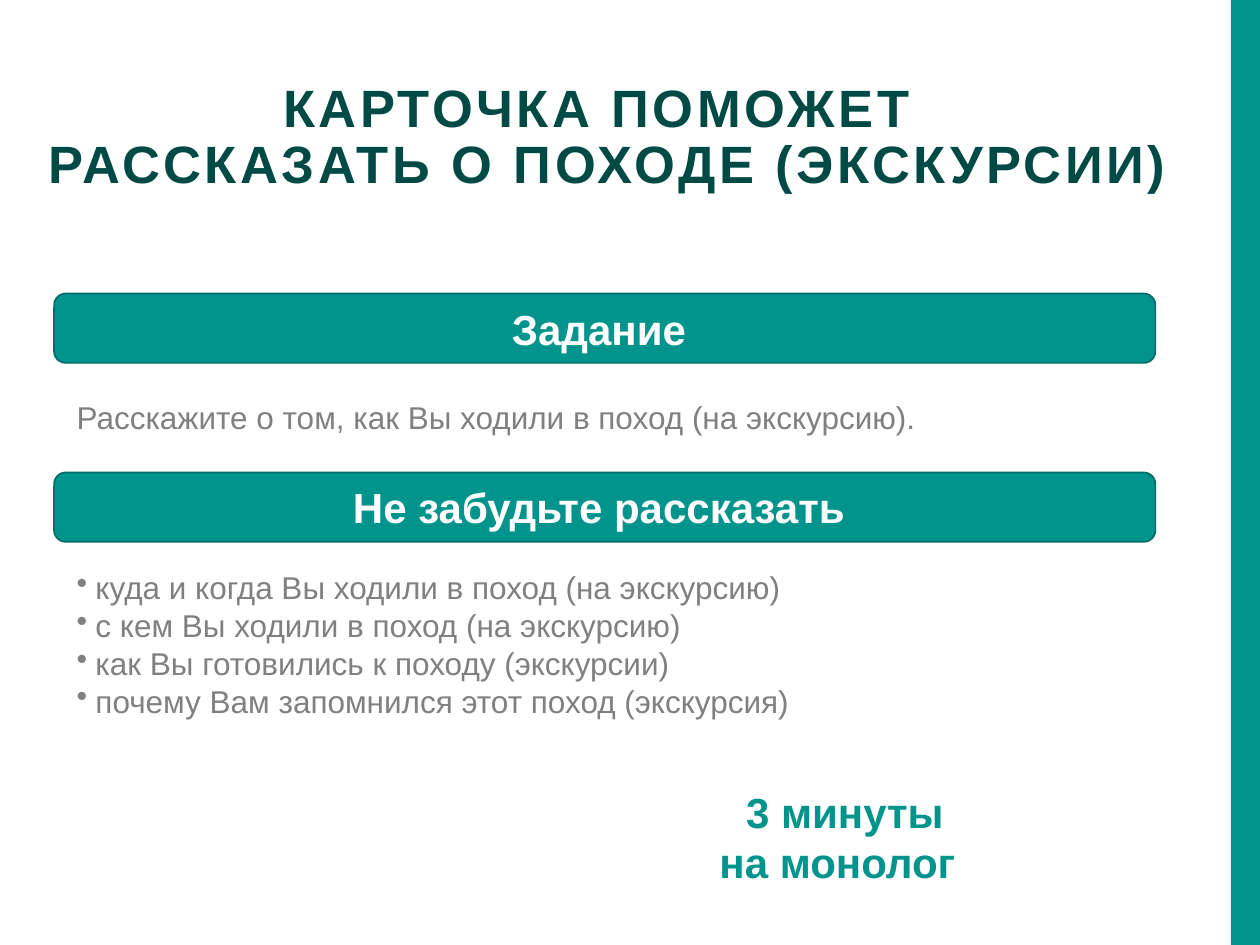
from dataclasses import dataclass

from lxml import etree
from pptx import Presentation
from pptx.dml.color import RGBColor
from pptx.enum import shapes, text
from pptx.oxml import ns
from pptx.util import Emu, Inches, Pt

COLS, ROWS = 100, 75
CELL = Inches(0.1)
TEAL, EDGE, DARK, GREY, WHITE = "00948C", "006D68", "004A46", "808080", "FFFFFF"
LEFT, MID, RIGHT = text.PP_ALIGN.LEFT, text.PP_ALIGN.CENTER, text.PP_ALIGN.RIGHT


@dataclass(frozen=True)
class Area:
    """Place on the grid, in columns and rows."""
    col: float
    row: float
    wide: float
    high: float

    def box(self) -> list[Emu]:
        """Give left, top, width and height as lengths."""
        return [Emu(round(n * CELL)) for n in (self.col, self.row, self.wide, self.high)]


@dataclass(frozen=True)
class Style:
    """Look of a block of text."""
    size: int
    ink: str
    bold: bool = False
    align: text.PP_ALIGN = LEFT
    track: int = 0
    lead: float = 1.0
    dots: bool = False


@dataclass(frozen=True)
class Block:
    """Lines of text, one paragraph each, in an area."""
    area: Area
    style: Style
    lines: tuple[str, ...]


TITLE = Style(30, DARK, True, MID, track=2, lead=0.9)
HEAD = Style(24, WHITE, True, MID)
TIME = Style(24, TEAL, True, RIGHT)
BODY = Style(18, GREY)
LIST = Style(18, GREY, dots=True)

EDGE_BAR = Area(97.7, 0, 2.3, ROWS)
HEADS = [
    Block(Area(4.3, row, 87.4, 5.5), HEAD, (label,))
    for row, label in ((23.3, "Задание "), (37.5, "Не забудьте рассказать "))
]
TEXTS = [
    Block(Area(0, 6, 95, 11.8), TITLE,
          ("КАРТОЧКА ПОМОЖЕТ\v РАССКАЗАТЬ О ПОХОДЕ (ЭКСКУРСИИ)",)),
    Block(Area(50.8, 61.9, 26, 9.1), TIME, ("3 минуты ", "на монолог")),
    Block(Area(5.1, 31.1, 79.4, 4), BODY,
          ("Расскажите о том, как Вы ходили в поход (на экскурсию).",)),
    Block(Area(5.1, 44.6, 76.4, 13.1), LIST, (
        "куда и когда Вы ходили в поход (на экскурсию)",
        "с кем Вы ходили в поход (на экскурсию)",
        "как Вы готовились к походу (экскурсии)",
        "почему Вам запомнился этот поход (экскурсия)",
    )),
]


def hue(code: str) -> RGBColor:
    """Turn a hex string into a colour."""
    return RGBColor.from_string(code)


def dot(para) -> None:
    """Give a paragraph a hanging bullet."""
    props = para._p.get_or_add_pPr()
    hang = Inches(0.15)
    props.set("marL", str(hang))
    props.set("indent", str(-hang))
    etree.SubElement(props, ns.qn("a:buChar")).set("char", "•")


def write(frame, lines: tuple[str, ...], style: Style) -> None:
    """Fill a text frame, run by run."""
    frame.word_wrap = True
    for i, line in enumerate(lines):
        para = frame.add_paragraph() if i else frame.paragraphs[0]
        para.alignment = style.align
        para.line_spacing = style.lead
        if style.dots:
            dot(para)
        for j, part in enumerate(line.split("\v")):
            if j:
                para.add_line_break()
            run = para.add_run()
            run.text = part
            font = run.font
            font.name, font.size, font.bold = "Arial", Pt(style.size), style.bold
            font.color.rgb = hue(style.ink)
            if style.track:
                run._r.get_or_add_rPr().set("spc", str(style.track * 100))


def panel(slide, kind: shapes.MSO_SHAPE, area: Area, edge: str = ""):
    """Draw a teal shape, with an outline if one is named."""
    shape = slide.shapes.add_shape(kind, *area.box())
    shape.shadow.inherit = False
    shape.fill.solid()
    shape.fill.fore_color.rgb = hue(TEAL)
    if edge:
        shape.line.color.rgb = hue(edge)
        shape.line.width = Pt(1)
    else:
        shape.line.fill.background()
    return shape


def head(slide, block: Block) -> None:
    """Draw a rounded heading band."""
    frame = panel(slide, shapes.MSO_SHAPE.ROUNDED_RECTANGLE, block.area, EDGE).text_frame
    frame.vertical_anchor = text.MSO_ANCHOR.MIDDLE
    write(frame, block.lines, block.style)


def note(slide, block: Block) -> None:
    """Draw a plain text box."""
    write(slide.shapes.add_textbox(*block.area.box()).text_frame, block.lines, block.style)


def main() -> None:
    """Build and save the slide."""
    deck = Presentation()
    deck.slide_width, deck.slide_height = COLS * CELL, ROWS * CELL
    slide = deck.slides.add_slide(deck.slide_layouts[6])
    panel(slide, shapes.MSO_SHAPE.RECTANGLE, EDGE_BAR)
    for block in HEADS:
        head(slide, block)
    for block in TEXTS:
        note(slide, block)
    deck.save("out.pptx")


if __name__ == "__main__":
    main()
